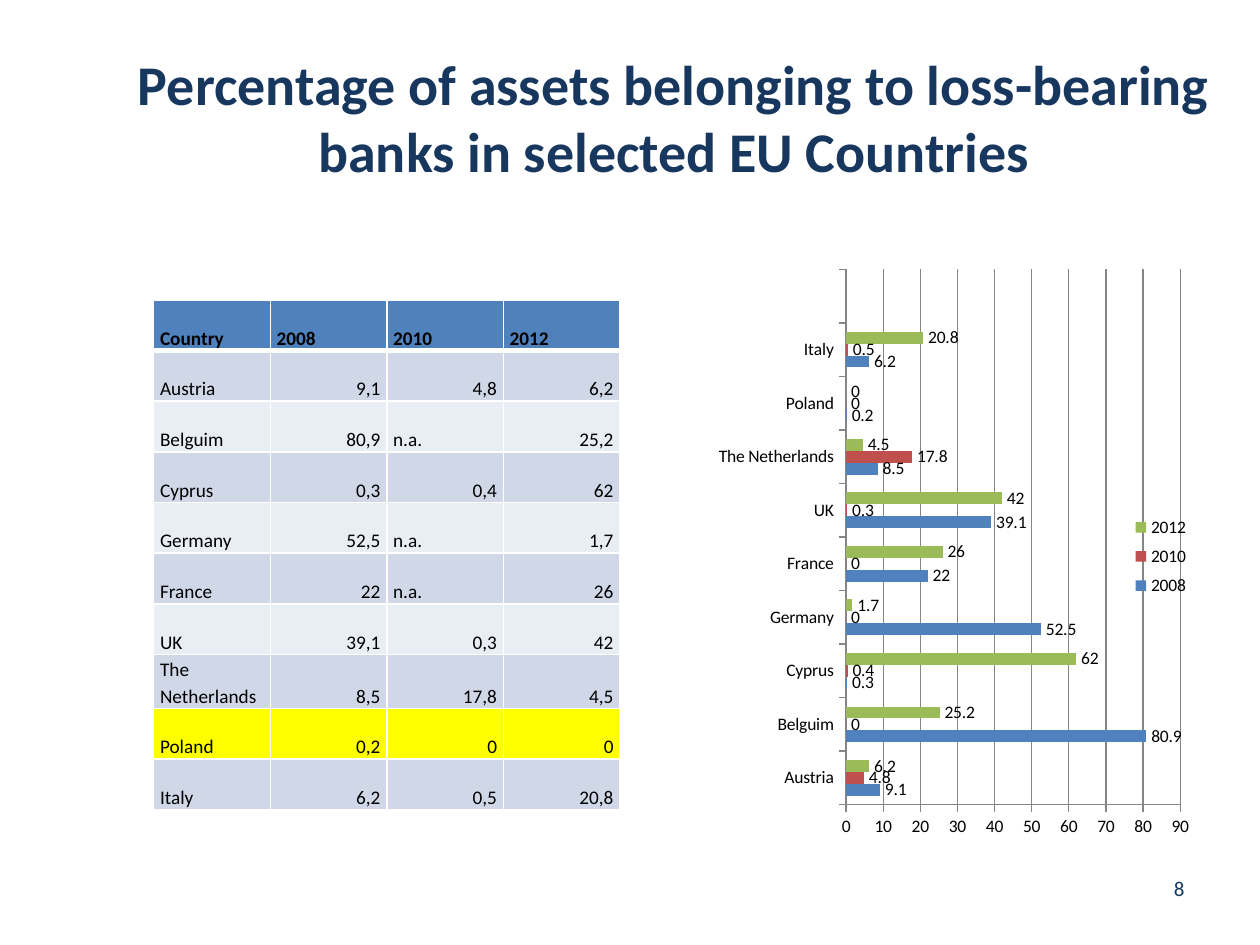
from lxml import etree
from pptx import Presentation
from pptx.chart.data import CategoryChartData
from pptx.dml.color import RGBColor
from pptx.enum.chart import XL_CHART_TYPE, XL_LEGEND_POSITION, XL_TICK_MARK
from pptx.enum.text import MSO_ANCHOR, PP_ALIGN
from pptx.oxml import parse_xml
from pptx.oxml.ns import nsdecls, qn
from pptx.util import Inches, Pt

LEFT, CENTER, RIGHT = PP_ALIGN.LEFT, PP_ALIGN.CENTER, PP_ALIGN.RIGHT
MIDDLE, BOTTOM = MSO_ANCHOR.MIDDLE, MSO_ANCHOR.BOTTOM
BAR = XL_CHART_TYPE.BAR_CLUSTERED
OUT = XL_TICK_MARK.OUTSIDE
LEGEND_RIGHT = XL_LEGEND_POSITION.RIGHT

FONT = "Calibri"
COLORS = {
    "navy": "17375E", "black": "000000", "white": "FFFFFF", "head": "4F81BD",
    "odd": "D0D8E8", "even": "E9EDF4", "mark": "FFFF00", "grid": "868686",
    "2008": "4F81BD", "2010": "C0504D", "2012": "9BBB59",
}

YEARS = ["2008", "2010", "2012"]
# Share of assets by country; None means not available
SHARES = {
    "Austria": (9.1, 4.8, 6.2),
    "Belguim": (80.9, None, 25.2),
    "Cyprus": (0.3, 0.4, 62),
    "Germany": (52.5, None, 1.7),
    "France": (22, None, 26),
    "UK": (39.1, 0.3, 42),
    "The Netherlands": (8.5, 17.8, 4.5),
    "Poland": (0.2, 0, 0),
    "Italy": (6.2, 0.5, 20.8),
}


def rgb(name):
    return RGBColor.from_string(COLORS[name])


def style(font, size, color, bold=False):
    font.name, font.size, font.bold = FONT, Pt(size), bold
    font.color.rgb = rgb(color)


def add_text(slide, box, text, size, align, bold=False):
    frame = slide.shapes.add_textbox(*map(Inches, box)).text_frame
    frame.word_wrap = True
    frame.vertical_anchor = MIDDLE
    frame.text = text
    para = frame.paragraphs[0]
    para.alignment = align
    style(para.runs[0].font, size, "navy", bold)


def set_edges(cell, base):
    props = cell._tc.get_or_add_tcPr()
    for side, width in (("L", 1), ("R", 1), ("T", 1), ("B", base)):
        props.append(parse_xml(
            f'<a:ln{side} {nsdecls("a")} w="{Pt(width)}"><a:solidFill>'
            f'<a:srgbClr val="{COLORS["white"]}"/></a:solidFill></a:ln{side}>'))


def fill_cell(cell, text, fill, align, head):
    cell.margin_left = cell.margin_right = Inches(0.05)
    cell.margin_top = cell.margin_bottom = 0
    cell.vertical_anchor = BOTTOM
    cell.text = text
    para = cell.text_frame.paragraphs[0]
    para.alignment = align
    para.line_spacing = 1.15
    style(para.runs[0].font, 11, "black", head)
    set_edges(cell, 3 if head else 1)
    cell.fill.solid()
    cell.fill.fore_color.rgb = rgb(fill)


def show(value):
    return "n.a." if value is None else str(value).replace(".", ",")


def add_grid(slide):
    rows = [["Country", *YEARS]]
    rows += [[name, *map(show, vals)] for name, vals in SHARES.items()]
    height, tall = 4.05, 0.43
    table = slide.shapes.add_table(
        len(rows), len(rows[0]), Inches(1.22), Inches(2.38),
        Inches(3.7), Inches(height)).table
    for r, row in enumerate(rows):
        name = row[0]
        # The Netherlands takes two lines
        table.rows[r].height = Inches(
            tall if name == "The Netherlands" else (height - tall) / (len(rows) - 1))
        if r == 0:
            fill = "head"
        elif name == "Poland":
            fill = "mark"
        else:
            fill = "odd" if r % 2 else "even"
        for c, text in enumerate(row):
            plain = r == 0 or c == 0 or text == "n.a."
            fill_cell(table.cell(r, c), text, fill, LEFT if plain else RIGHT, r == 0)


def set_layout(parent, index, x, y, w, h, inner=False):
    for old in parent.findall(qn("c:layout")):
        parent.remove(old)
    layout = etree.Element(qn("c:layout"))
    manual = etree.SubElement(layout, qn("c:manualLayout"))
    parts = [("layoutTarget", "inner")] if inner else []
    parts += [("xMode", "edge"), ("yMode", "edge"),
              ("x", x), ("y", y), ("w", w), ("h", h)]
    for tag, value in parts:
        etree.SubElement(manual, qn(f"c:{tag}")).set("val", str(value))
    parent.insert(index, layout)


def add_bars(slide):
    data = CategoryChartData()
    # An empty last category leaves room at the top
    data.categories = [*SHARES, ""]
    for year, vals in zip(YEARS, zip(*SHARES.values())):
        data.add_series(year, [*(v or 0 for v in vals), None])
    chart = slide.shapes.add_chart(
        BAR, Inches(5.08), Inches(1.78), Inches(4.42), Inches(5.12), data).chart
    style(chart.font, 10, "black")
    chart.has_title = False

    # Bars and labels
    plot = chart.plots[0]
    plot.gap_width, plot.overlap = 150, 0
    plot.vary_by_categories = False
    for series in plot.series:
        series.format.fill.solid()
        series.format.fill.fore_color.rgb = rgb(series.name)
        series.invert_if_negative = False
        series.data_labels.show_value = True

    # Axes
    values = chart.value_axis
    values.minimum_scale, values.maximum_scale, values.major_unit = 0, 90, 10
    values.has_major_gridlines = True
    for axis in (chart.category_axis, values):
        axis.major_tick_mark = OUT
    for line in (chart.category_axis.format.line, values.format.line,
                 values.major_gridlines.format.line):
        line.color.rgb = rgb("grid")
        line.width = Pt(0.75)

    # Legend over the plot
    chart.has_legend = True
    chart.legend.position = LEGEND_RIGHT
    chart.legend.include_in_layout = False
    area = chart._chartSpace.chart.plotArea
    set_layout(area, 0, 0.37, 0.07, 0.6, 0.83, inner=True)
    set_layout(chart.legend._element, 1, 0.87, 0.44, 0.13, 0.15)


def main():
    deck = Presentation()
    deck.slide_width, deck.slide_height = Inches(10), Inches(7.5)
    slide = deck.slides.add_slide(deck.slide_layouts[6])
    # Title
    add_text(slide, (0.98, 0.3, 8.74, 1.25),
             "Percentage of assets belonging to loss-bearing banks "
             "in selected EU Countries", 32, CENTER, bold=True)
    # Table and chart
    add_grid(slide)
    add_bars(slide)
    # Slide number
    add_text(slide, (7.17, 6.74, 2.33, 0.61), "8", 12, RIGHT)
    deck.save("out.pptx")


if __name__ == "__main__":
    main()
